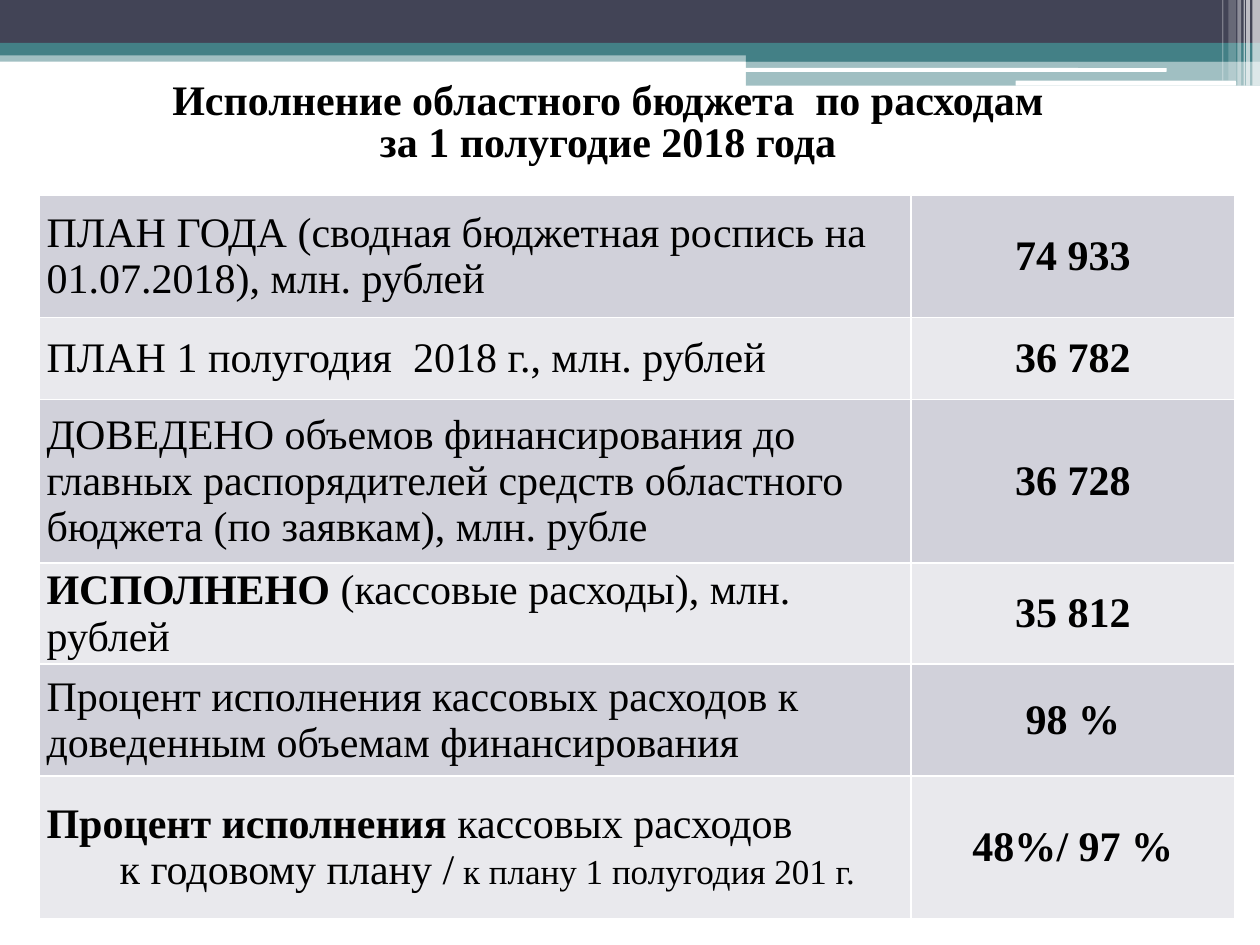
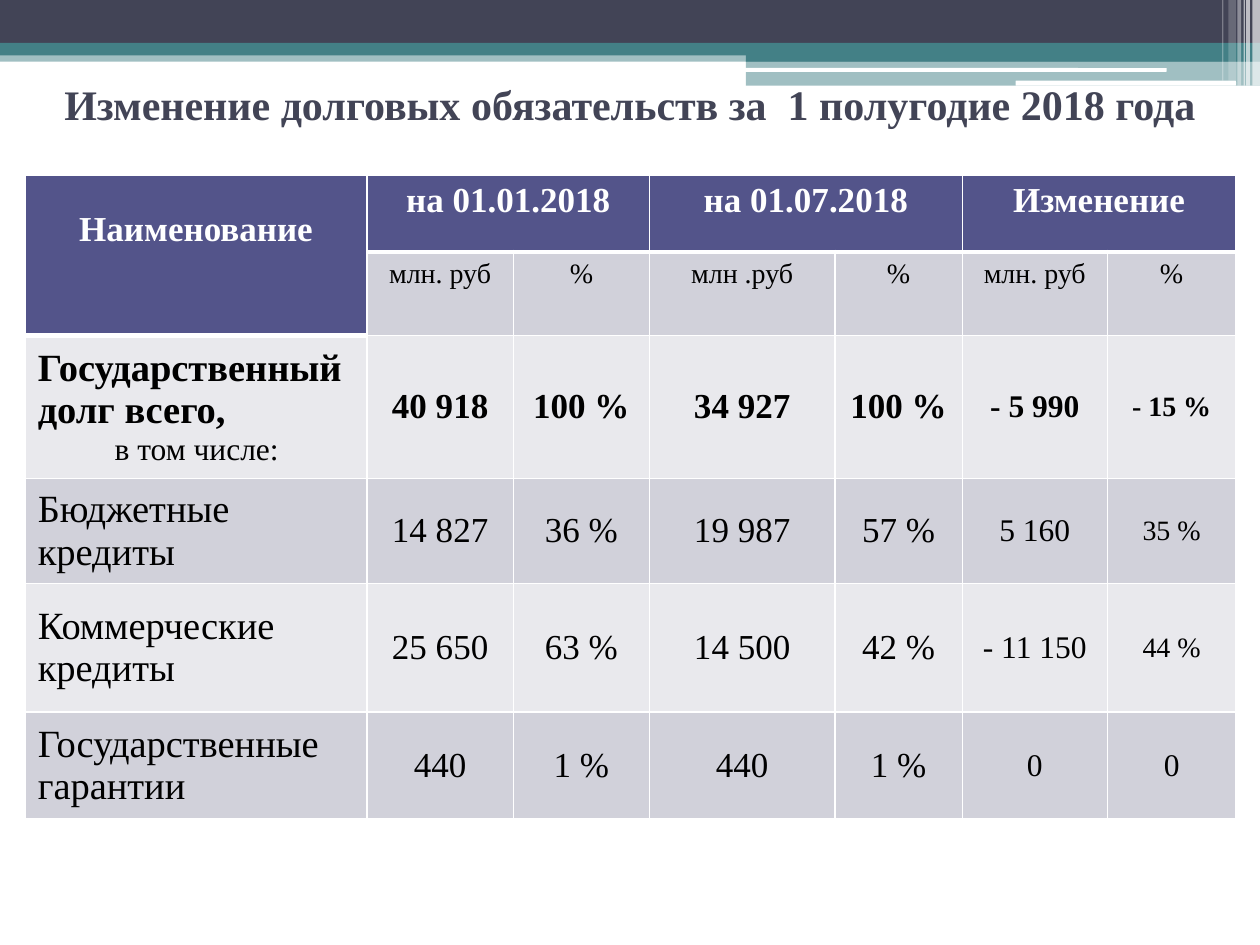
import pptx
import pptx.util
import pptx.dml.color
import pptx.enum.shapes
import pptx.enum.text
import pptx.oxml
import pptx.oxml.ns

# The slide is a grid of 100 columns by 75 rows.
COLS, ROWS = 100, 75
CELL = pptx.util.Inches(0.1)
FONT = "Times New Roman"
WHITE, BLACK, SLATE, TEAL = "FFFFFF", "000000", "424456", "438086"
INDIGO, DARK, LIGHT = "53548A", "D1D1DA", "E9E9ED"
RECT = pptx.enum.shapes.MSO_SHAPE.RECTANGLE
ROUND = pptx.enum.shapes.MSO_SHAPE.ROUNDED_RECTANGLE
LEFT, CENTER = pptx.enum.text.PP_ALIGN.LEFT, pptx.enum.text.PP_ALIGN.CENTER
TOP, MIDDLE = pptx.enum.text.MSO_ANCHOR.TOP, pptx.enum.text.MSO_ANCHOR.MIDDLE

# Band parts: shape, column, row, width, height, colour, opacity in percent
BARS = [
    (RECT, 0, 4, 100, 0.9, TEAL, 50),
    (RECT, 0, 0, 100, 3.4, SLATE, 100),
    (RECT, 0, 3.4, 100, 1, TEAL, 100),
    (RECT, 59.2, 3.9, 40.8, 1, TEAL, 100),
    (RECT, 59.2, 4.8, 40.8, 2, TEAL, 50),
    (ROUND, 59.1, 5.4, 33.5, 0.3, WHITE, 100),
    (ROUND, 80.6, 6.4, 17.5, 0.4, WHITE, 100),
]
# Light stripes at the right end: column, width, height, opacity
STRIPES = [
    (99.4, 0.6, 6.8, 65), (98.9, 0.3, 6.8, 65), (98.7, 0.1, 6.8, 60),
    (98.2, 0.3, 6.8, 40), (97.5, 0.6, 6.4, 20), (97, 0.1, 6.4, 30),
]

BUDGET = [
    ("", "ПЛАН ГОДА (сводная бюджетная роспись на 01.07.2018), млн. рублей",
     "74 933"),
    ("", "ПЛАН 1 полугодия  2018 г., млн. рублей", "36 782"),
    ("", "ДОВЕДЕНО объемов финансирования до главных распорядителей средств "
     "областного бюджета (по заявкам), млн. рубле", "36 728"),
    ("ИСПОЛНЕНО ", "(кассовые расходы), млн. рублей", "35 812"),
    ("", "Процент исполнения кассовых расходов к доведенным объемам "
     "финансирования", "98 %"),
    ("Процент исполнения ", "кассовых расходов", "48%/ 97 %"),
]
GROUPS = ["на 01.01.2018", "на 01.07.2018", "Изменение"]
UNITS = ["млн. руб", "%", "млн .руб", "%", "млн. руб", "%"]
DEBT = [
    ["Государственный долг всего,", "40 918", "100 %", "34 927", "100 %",
     "- 5 990", "- 15 %"],
    ["Бюджетные кредиты", "14 827", "36 %", "19 987", "57 %", "5 160", "35 %"],
    ["Коммерческие кредиты", "25 650", "63 %", "14 500", "42 %", "- 11 150",
     "44 %"],
    ["Государственные гарантии", "440", "1 %", "440", "1 %", "0", "0"],
]
SIZES = [22, 20, 20, 20, 20, 18, 16]


def grid(*cells):
    return [round(n * CELL) for n in cells]


def tint(code):
    return pptx.dml.color.RGBColor.from_string(code)


def paint(fill, code, alpha=100):
    fill.solid()
    fill.fore_color.rgb = tint(code)
    if alpha < 100:
        color = fill._xPr.find(".//" + pptx.oxml.ns.qn("a:srgbClr"))
        node = pptx.oxml.parse_xml(
            f'<a:alpha {pptx.oxml.ns.nsdecls("a")} val="{alpha * 1000}"/>')
        color.append(node)


def style(para, size, bold=False, color=BLACK, align=LEFT):
    para.alignment = align
    for run in para.runs:
        font = run.font
        font.name, font.size, font.bold = FONT, pptx.util.Pt(size), bold
        font.color.rgb = tint(color)


def tail(para, text, size, bold=False):
    """Add a run in its own size and weight to the end of a paragraph."""
    run = para.add_run()
    run.text = text
    font = run.font
    font.name, font.size, font.bold = FONT, pptx.util.Pt(size), bold
    font.color.rgb = tint(BLACK)


def inset(para, cols):
    """Indent a paragraph from the left edge."""
    para._p.get_or_add_pPr().set("marL", str(round(cols * CELL)))


def band(slide, box):
    left, top = box
    parts = BARS + [(RECT, x, 0, w, h, WHITE, a) for x, w, h, a in STRIPES]
    for kind, x, y, w, h, color, alpha in parts:
        bar = slide.shapes.add_shape(kind, *grid(left + x, top + y, w, h))
        bar.shadow.inherit = False
        bar.line.fill.background()
        paint(bar.fill, color, alpha)


def title(slide, box, text, color, anchor=MIDDLE, space=1.0):
    frame = slide.shapes.add_textbox(*grid(*box)).text_frame
    frame.word_wrap = True
    frame.vertical_anchor = anchor
    frame.text = text
    for para in frame.paragraphs:
        para.line_spacing = space
        style(para, 24, True, color, CENTER)


def table(slide, box, cols, rows):
    """Add a plain table whose columns and rows share out the box."""
    frame = slide.shapes.add_table(len(rows), len(cols), *grid(*box))
    tab = frame.table
    tab.first_row = tab.horz_banding = False
    for parts, sizes, total in ((tab.columns, cols, box[2]),
                                (tab.rows, rows, box[3])):
        for part, size in zip(parts, sizes):
            length = round(size / sum(sizes) * total * CELL)
            if parts is tab.columns:
                part.width = length
            else:
                part.height = length
    return tab


def edge(cell, top=1, bottom=1):
    """Draw white borders, with widths in points."""
    props = cell._tc.get_or_add_tcPr()
    for side, width in (("L", 1), ("R", 1), ("T", top), ("B", bottom)):
        props.append(pptx.oxml.parse_xml(
            f'<a:ln{side} {pptx.oxml.ns.nsdecls("a")} w="{width * 12700}">'
            f'<a:solidFill><a:srgbClr val="{WHITE}"/></a:solidFill>'
            f'</a:ln{side}>'))


def put(cell, text, fill, size, bold=False, color=BLACK, align=CENTER,
        anchor=MIDDLE, top=1, bottom=1):
    edge(cell, top, bottom)
    paint(cell.fill, fill)
    cell.vertical_anchor = anchor
    cell.text_frame.text = text
    style(cell.text_frame.paragraphs[0], size, bold, color, align)


def spending(slide, box):
    tab = table(slide, box, [6.92, 2.57], [0.97, 0.65, 1.3, 0.8, 0.89, 1.13])
    for row, (lead, text, value) in enumerate(BUDGET):
        fill = LIGHT if row % 2 else DARK
        name, figure = tab.cell(row, 0), tab.cell(row, 1)
        put(name, lead or text, fill, 24, bool(lead), align=LEFT)
        if lead:
            tail(name.text_frame.paragraphs[0], text, 24)
        put(figure, value, fill, 24, True)
        for cell in (name, figure):
            cell.margin_left = cell.margin_right = pptx.util.Inches(0.06)
            cell.margin_top = cell.margin_bottom = 0
    para = tab.cell(len(BUDGET) - 1, 0).text_frame.add_paragraph()
    inset(para, 5.8)
    tail(para, "к годовому плану /", 24)
    tail(para, " к плану 1 полугодия 201 г.", 20)


def debt(slide, box):
    tab = table(slide, box, [2.71, 1.16, 1.08, 1.47, 1.01, 1.15, 1.02],
                [0.61, 0.66, 1.12, 0.81, 1.02, 0.85])
    head = tab.cell(0, 0)
    put(head, "Наименование", INDIGO, 20, True, WHITE, anchor=TOP, bottom=3)
    head.margin_top = pptx.util.Inches(0.28)
    edge(tab.cell(1, 0), bottom=3)
    head.merge(tab.cell(1, 0))
    for index, text in enumerate(GROUPS):
        col = 1 + 2 * index
        put(tab.cell(0, col), text, INDIGO, 20, True, WHITE, anchor=TOP,
            bottom=3)
        edge(tab.cell(0, col + 1), bottom=3)
        tab.cell(0, col).merge(tab.cell(0, col + 1))
    for col, text in enumerate(UNITS, 1):
        put(tab.cell(1, col), text, DARK, 16, anchor=TOP, top=3)
    for row, texts in enumerate(DEBT, 2):
        fill = DARK if row % 2 else LIGHT
        for col, text in enumerate(texts):
            size = 18 if text == "0" else SIZES[col]
            put(tab.cell(row, col), text, fill, size, row == 2,
                align=CENTER if col else LEFT,
                top=3 if row == 2 and col == 0 else 1)
    para = tab.cell(2, 0).text_frame.add_paragraph()
    inset(para, 6.1)
    tail(para, "в том числе:", 18)


def main():
    deck = pptx.Presentation()
    deck.slide_width, deck.slide_height = grid(COLS, ROWS)
    first, second = [deck.slides.add_slide(deck.slide_layouts[6])
                     for _ in range(2)]
    for slide in (first, second):
        band(slide, (0, 0))
    title(first, (0, 6, 96.5, 7.1),
          "Исполнение областного бюджета  по расходам\n"
          "за 1 полугодие 2018 года", BLACK, TOP, 0.83)
    spending(first, (3.1, 15.5, 94.9, 57.4))
    title(second, (0, 4.7, 100, 7),
          "Изменение долговых обязательств за  1 полугодие 2018 года", SLATE)
    debt(second, (2, 13.9, 96.1, 50.7))
    deck.save("out.pptx")


if __name__ == "__main__":
    main()
